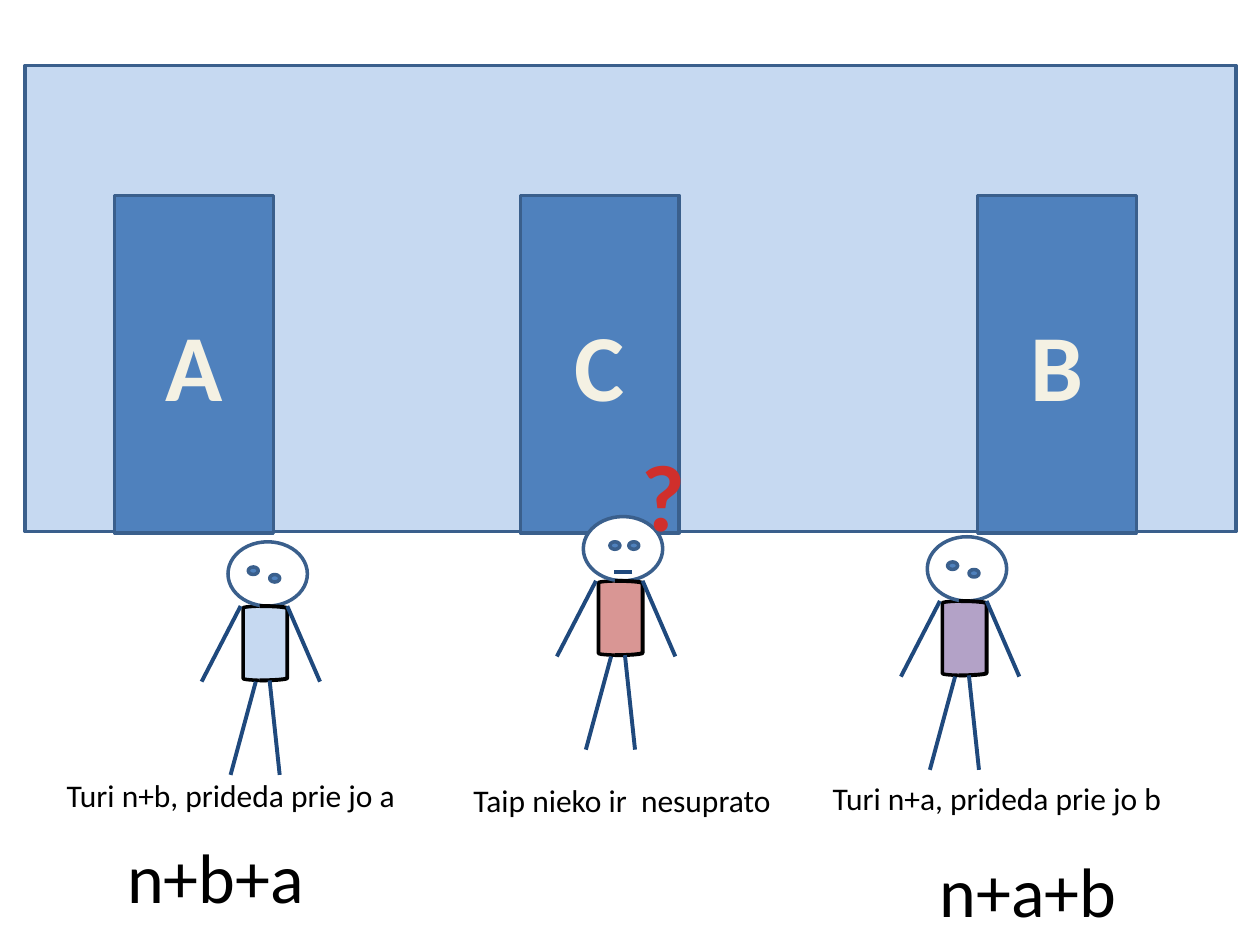
"""Builds a slide of three doors with a stick figure and a caption at each."""
from lxml import etree
from pptx import Presentation
from pptx.dml.color import RGBColor
from pptx.enum.shapes import MSO_CONNECTOR, MSO_SHAPE
from pptx.enum.text import MSO_ANCHOR, MSO_AUTO_SIZE, PP_ALIGN
from pptx.oxml.ns import qn
from pptx.util import Inches, Pt

RECT = MSO_SHAPE.RECTANGLE
OVAL = MSO_SHAPE.OVAL
LEFT_HALF = MSO_SHAPE.LEFT_BRACKET
RIGHT_HALF = MSO_SHAPE.RIGHT_BRACKET
STRAIGHT = MSO_CONNECTOR.STRAIGHT
MIDDLE = MSO_ANCHOR.MIDDLE
TOP = MSO_ANCHOR.TOP
CENTER = PP_ALIGN.CENTER
LEFT = PP_ALIGN.LEFT
GROW = MSO_AUTO_SIZE.SHAPE_TO_FIT_TEXT

FONT = "Calibri"
COLORS = {
    "wall": "C6D9F1", "door": "4F81BD", "edge": "3A5F8C", "cream": "F4F1E3",
    "white": "FFFFFF", "black": "000000", "limb": "1F497D", "red": "D02F2C",
    "blue": "C6D9F1", "rose": "D99694", "plum": "B3A2C7",
}
LIMBS = [
    ((0.33, 1.1), (0.41, 1.85)),
    ((0.47, 0.51), (0.73, 1.11)),
    ((0.22, 1.11), (0.02, 1.85)),
    ((0.1, 0.51), (-0.21, 1.11)),
]
TILTED = [(0.16, 0.2), (0.33, 0.26)]
LEVEL = [(0.21, 0.2), (0.36, 0.2)]
DOORS = [("A", 0.91), ("B", 7.76), ("C", 4.13)]
FIGURES = [
    (7.36, 4.26, "plum", TILTED),
    (1.81, 4.3, "blue", TILTED),
    (4.63, 4.1, "rose", LEVEL),
]
CAPTIONS = [
    ("Turi n+b, prideda prie jo a", (0.43, 6.11, 3.15, 0.4), 18),
    ("Turi n+a, prideda prie jo b", (6.51, 6.13, 3.15, 0.4), 18),
    ("Taip nieko ir  nesuprato", (3.66, 6.15, 2.6, 0.4), 18),
    ("n+b+a", (0.91, 6.57, 1.95, 0.77), 40),
    ("n+a+b", (7.36, 6.68, 1.95, 0.77), 40),
]


def color(name):
    """Return the named colour."""
    return RGBColor.from_string(COLORS[name])


def add_form(shapes, kind, box, fill, edge="edge", width=2):
    """Add a filled and outlined preset shape."""
    form = shapes.add_shape(kind, *map(Inches, box))
    form.shadow.inherit = False
    form.fill.solid()
    form.fill.fore_color.rgb = color(fill)
    form.line.color.rgb = color(edge)
    form.line.width = Pt(width)
    return form


def add_line(shapes, start, end):
    """Add a limb-coloured straight line."""
    line = shapes.add_connector(STRAIGHT, *map(Inches, start + end))
    line.line.color.rgb = color("limb")
    line.line.width = Pt(2.25)
    etree.SubElement(line._element.spPr, qn("a:effectLst"))


def write(frame, text, size, tone="black", bold=False, align=LEFT):
    """Write one run in the first paragraph of a frame."""
    para = frame.paragraphs[0]
    para.alignment = align
    run = para.add_run()
    run.text = text
    run.font.name = FONT
    run.font.size = Pt(size)
    run.font.bold = bold
    run.font.color.rgb = color(tone)


def add_text(shapes, text, box, size, wrap=True, **style):
    """Add a text box that grows with its text."""
    frame = shapes.add_textbox(*map(Inches, box)).text_frame
    frame.word_wrap = wrap
    frame.auto_size = GROW
    frame.vertical_anchor = TOP
    write(frame, text, size, **style)


def add_door(shapes, label, left):
    """Add a door with its letter."""
    door = add_form(shapes, RECT, (left, 1.55, 1.26, 2.68), "door")
    door.text_frame.vertical_anchor = MIDDLE
    write(door.text_frame, label, 54, "cream", True, CENTER)


def add_figure(shapes, left, top, shirt, eyes):
    """Add a grouped stick figure whose head starts at left, top."""
    parts = shapes.add_group_shape().shapes
    body = top + 0.51
    add_form(parts, LEFT_HALF, (left + 0.12, body, 0.18, 0.59), shirt, "black")
    add_form(parts, OVAL, (left, top, 0.63, 0.51), "white")
    for x, y in eyes:
        add_form(parts, OVAL, (left + x, top + y, 0.08, 0.06), "door")
    add_form(parts, RIGHT_HALF, (left + 0.25, body, 0.22, 0.59), shirt, "black", 2.25)
    for limb in LIMBS:
        add_line(parts, *((left + x, top + y) for x, y in limb))


def main():
    """Build and save the slide."""
    deck = Presentation()
    deck.slide_width, deck.slide_height = Inches(10), Inches(7.5)
    shapes = deck.slides.add_slide(deck.slide_layouts[6]).shapes
    add_form(shapes, RECT, (0.2, 0.52, 9.61, 3.7), "wall")
    for door in DOORS:
        add_door(shapes, *door)
    for figure in FIGURES:
        add_figure(shapes, *figure)
    add_text(shapes, "?", (4.99, 3.42, 0.55, 1.01), 54, wrap=False,
             tone="red", bold=True, align=CENTER)
    add_line(shapes, (5.02, 4.54), (4.87, 4.54))
    for caption in CAPTIONS:
        add_text(shapes, *caption)
    deck.save("out.pptx")


if __name__ == "__main__":
    main()
